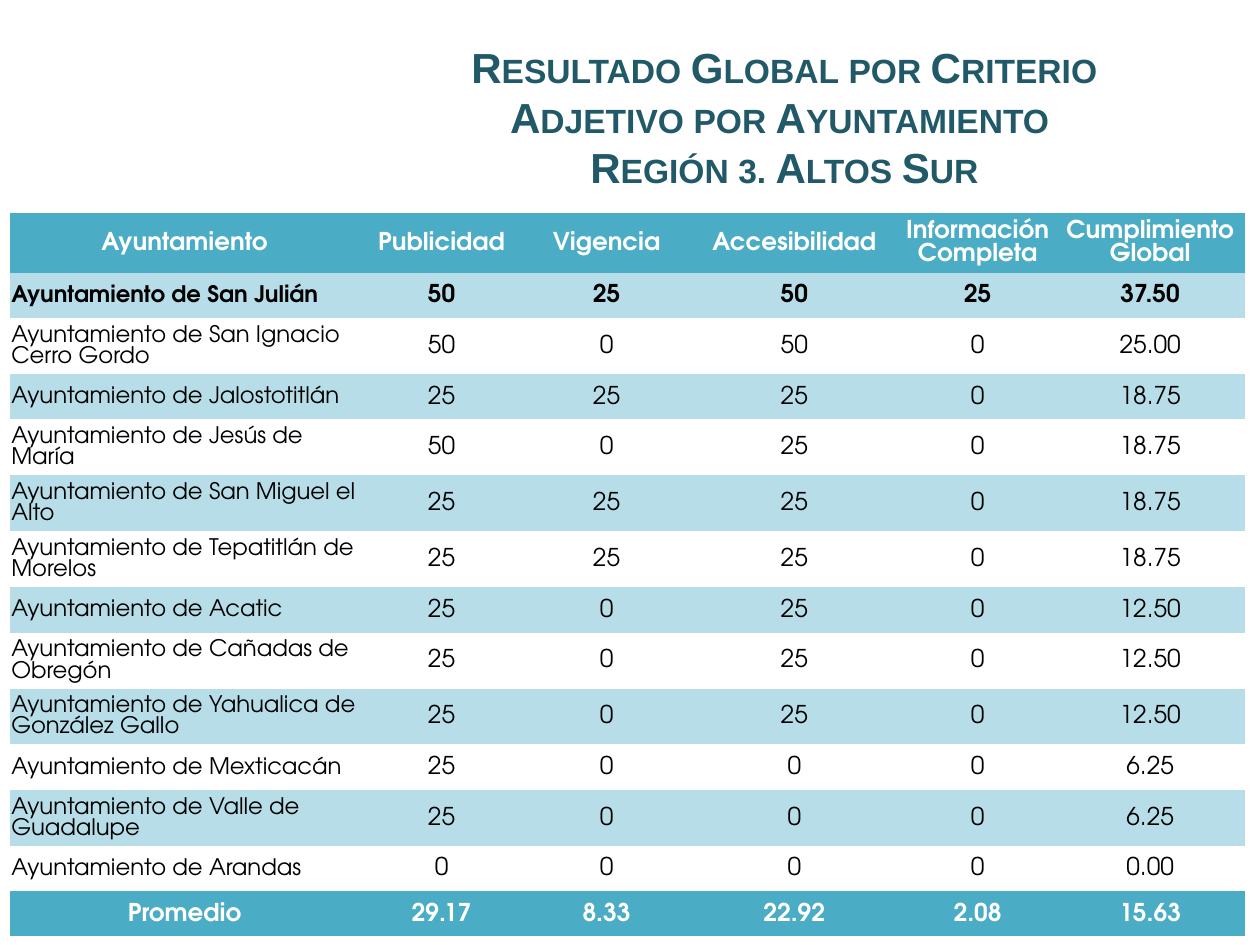
"""Build the Altos Sur results slide: a title over a banded table of scores."""
from pptx import Presentation, util as u
from pptx.dml import color
from pptx.enum import text

TEAL, PALE, NAVY, WHITE, BLACK = "4BACC6", "B7DEE8", "215968", "FFFFFF", "000000"


def style(font, name, size, bold, tint):
    font.name, font.size, font.bold = name, u.Pt(size), bold
    font.color.rgb = color.RGBColor.from_string(tint)


scores = [
    ("San Julián", "50", "25", "50", "25", "37.50"),
    ("San Ignacio Cerro Gordo", "50", "0", "50", "0", "25.00"),
    ("Jalostotitlán", "25", "25", "25", "0", "18.75"),
    ("Jesús de María", "50", "0", "25", "0", "18.75"),
    ("San Miguel el Alto", "25", "25", "25", "0", "18.75"),
    ("Tepatitlán de Morelos", "25", "25", "25", "0", "18.75"),
    ("Acatic", "25", "0", "25", "0", "12.50"),
    ("Cañadas de Obregón", "25", "0", "25", "0", "12.50"),
    ("Yahualica de González Gallo", "25", "0", "25", "0", "12.50"),
    ("Mexticacán", "25", "0", "0", "0", "6.25"),
    ("Valle de Guadalupe", "25", "0", "0", "0", "6.25"),
    ("Arandas", "0", "0", "0", "0", "0.00"),
]
header = ("Ayuntamiento", "Publicidad", "Vigencia", "Accesibilidad",
          "Información\vCompleta", "Cumplimiento Global")
average = ("Promedio", "29.17", "8.33", "22.92", "2.08", "15.63")
rows = [header, *((f"Ayuntamiento de {town}", *marks) for town, *marks in scores), average]
last = len(rows) - 1
column_shares = (0.277, 0.131, 0.131, 0.167, 0.124, 0.15)

deck = Presentation()
deck.slide_width, deck.slide_height = u.Inches(10), u.Inches(7.5)
wide, high = deck.slide_width, deck.slide_height
page = deck.slides.add_slide(deck.slide_layouts[6])

box = page.shapes.add_textbox(int(wide * 0.295), int(high * 0.04),
                              int(wide * 0.655), int(high * 0.167))
frame = box.text_frame
frame.word_wrap = True
frame.vertical_anchor = text.MSO_ANCHOR.MIDDLE
frame.text = "Resultado Global por Criterio Adjetivo por Ayuntamiento \vRegión 3. Altos Sur"
para = frame.paragraphs[0]
para.alignment = text.PP_ALIGN.CENTER
for span in para.runs:
    style(span.font, "Arial", 24, True, NAVY)
    span.font._element.set("cap", "small")

row_heights = [0.44] + [0.42 if len(row[0]) > 29 else 0.36 for row in rows[1:]]
holder = page.shapes.add_table(len(rows), len(header), int(wide * 0.008), int(high * 0.225),
                               int(wide * sum(column_shares)), u.Inches(sum(row_heights)))
table = holder.table
table.first_row = table.horz_banding = False
table._tbl.tblPr[0].text = "{2D5ABB26-0587-4C30-8999-92F81FD0307C}"
for column, share in zip(table.columns, column_shares):
    column.width = int(wide * share)

for r, row in enumerate(rows):
    table.rows[r].height = u.Inches(row_heights[r])
    framing = r in (0, last)
    for c, value in enumerate(row):
        cell = table.cell(r, c)
        cell.margin_left = cell.margin_top = cell.margin_right = u.Inches(0.01)
        cell.margin_bottom = 0
        cell.vertical_anchor = text.MSO_ANCHOR.MIDDLE
        if framing or r % 2:
            cell.fill.solid()
            cell.fill.fore_color.rgb = color.RGBColor.from_string(TEAL if framing else PALE)
        else:
            cell.fill.background()
        cell.text_frame.text = value
        para = cell.text_frame.paragraphs[0]
        named = c == 0 and not framing
        para.alignment = text.PP_ALIGN.LEFT if named else text.PP_ALIGN.CENTER
        for span in para.runs:
            style(span.font, "TeX Gyre Adventor", 13 if named else 14,
                  framing or r == 1, WHITE if framing else BLACK)

deck.save("out.pptx")
